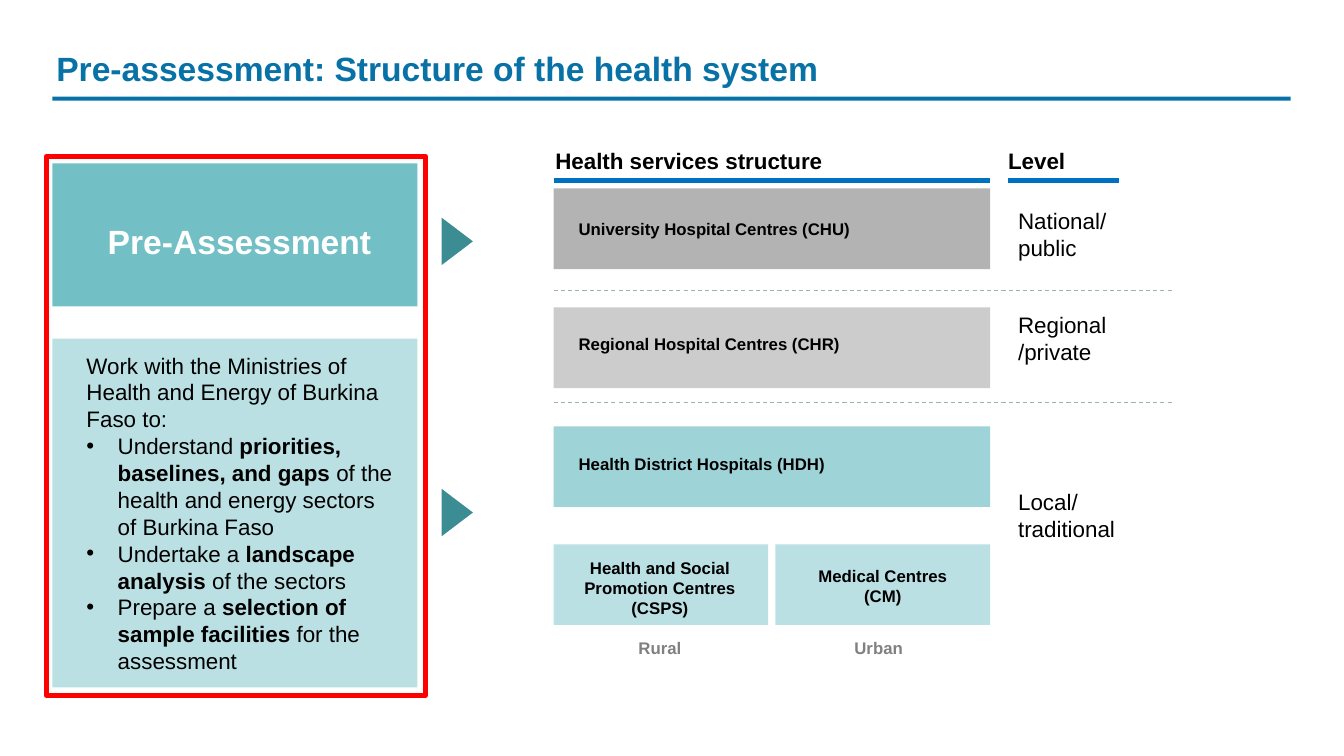
from lxml import etree
from pptx import Presentation
from pptx.dml.color import RGBColor
from pptx.enum.dml import MSO_LINE
from pptx.enum.shapes import MSO_CONNECTOR, MSO_SHAPE
from pptx.enum.text import PP_ALIGN
from pptx.oxml.ns import qn
from pptx.util import Emu, Pt

PX = 9144  # 100 px to the inch
LEFT, CENTER = PP_ALIGN.LEFT, PP_ALIGN.CENTER
RECT, TRIANGLE = MSO_SHAPE.RECTANGLE, MSO_SHAPE.ISOSCELES_TRIANGLE
STRAIGHT, DASH = MSO_CONNECTOR.STRAIGHT, MSO_LINE.DASH
FONT = "Arial"
BULLET_INDENT = 31

COLORS = {
    "title": "0872A6", "header": "72BFC5", "panel": "BBE0E3", "frame": "FF0000",
    "arrow": "3C8C93", "national": "B3B3B3", "regional": "CCCCCC",
    "district": "9ED3D7", "rule": "0070C0", "divider": "94B5B7",
    "black": "000000", "white": "FFFFFF", "gray": "808080",
}

TITLE = "Pre-assessment: Structure of the health system"
PANEL_TITLE = "Pre-Assessment"
# "**" switches bold on and off
PANEL_INTRO = "Work with the Ministries of Health and Energy of Burkina Faso to:"
PANEL_TASKS = [
    "Understand **priorities, baselines, and gaps** of the health and energy sectors of Burkina Faso",
    "Undertake a **landscape analysis** of the sectors",
    "Prepare a **selection of sample facilities** for the assessment",
]
# heading, text left, text width, rule left, rule right
HEADINGS = [
    ("Health services structure", 541, 433, 549, 982),
    ("Level", 990, 113, 1000, 1110),
]
# label, label top, fill
HOSPITALS = [
    ("University Hospital Centres (CHU)", 212, "national"),
    ("Regional Hospital Centres (CHR)", 326, "regional"),
    ("Health District Hospitals (HDH)", 445, "district"),
]
# label, label left, label top, label height, setting, setting left
LOCAL_CENTRES = [
    ("Health and Social Promotion Centres (CSPS)", 564, 548, 71, "Rural", 564),
    ("Medical Centres (CM)", 785, 556, 50, "Urban", 781),
]
# paragraphs, top, width
LEVELS = [
    (["National/public"], 201, 113),
    (["Regional/private"], 304, 113),
    (["Local/", "traditional"], 479, 126),
]
DIVIDER_TOPS = [288, 399]
ARROW_TOPS = [493, 224]

PANEL_LEFT, PANEL_WIDTH = 52, 362
CHART_LEFT, CHART_WIDTH = 549, 433
ROW_TOP, ROW_PITCH, ROW_HEIGHT = 187, 118, 80
CENTRE_WIDTH = 213

prs = Presentation()
prs.slide_width, prs.slide_height = Emu(1333 * PX), Emu(750 * PX)
slide = prs.slides.add_slide(prs.slide_layouts[6])


def color(name):
    return RGBColor.from_string(COLORS[name])


def add_block(left, top, width, height, fill, kind=RECT):
    block = slide.shapes.add_shape(kind, left * PX, top * PX, width * PX, height * PX)
    block.shadow.inherit = False
    block.line.fill.background()
    if fill:
        block.fill.solid()
        block.fill.fore_color.rgb = color(fill)
    else:
        block.fill.background()
    return block


def add_rule(left, right, top, stroke, weight, dash=None):
    rule = slide.shapes.add_connector(STRAIGHT, left * PX, top * PX, right * PX, top * PX)
    rule.line.color.rgb = color(stroke)
    rule.line.width = Pt(weight)
    if dash:
        rule.line.dash_style = dash
    etree.SubElement(rule._element.spPr, qn("a:effectLst"))


def add_bullet(paragraph):
    properties = paragraph._p.get_or_add_pPr()
    properties.set("marL", str(BULLET_INDENT * PX))
    properties.set("indent", str(-BULLET_INDENT * PX))
    etree.SubElement(properties, qn("a:buFont")).set("typeface", FONT)
    etree.SubElement(properties, qn("a:buChar")).set("char", "•")


def add_text(left, top, width, height, paragraphs, size, ink="black",
             bold=False, align=LEFT, bulleted_from=None):
    """Write paragraphs; those from index bulleted_from onwards get bullets."""
    box = slide.shapes.add_textbox(left * PX, top * PX, width * PX, height * PX)
    frame = box.text_frame
    frame.word_wrap = True
    for index, content in enumerate(paragraphs):
        paragraph = frame.add_paragraph() if index else frame.paragraphs[0]
        paragraph.alignment = align
        if bulleted_from is not None and index >= bulleted_from:
            add_bullet(paragraph)
        for part, words in enumerate(content.split("**")):
            run = paragraph.add_run()
            run.text = words
            run.font.name = FONT
            run.font.size = Pt(size)
            run.font.bold = bold or part % 2 == 1
            run.font.color.rgb = color(ink)


add_block(52, 96, 1228, 4, "title")
add_text(46, 43, 1241, 50, [TITLE], 24, "title", bold=True)

add_block(PANEL_LEFT, 162, PANEL_WIDTH, 142, "header")
add_block(PANEL_LEFT, 336, PANEL_WIDTH, 346, "panel")
add_text(76, 214, 323, 50, [PANEL_TITLE], 24, "white", bold=True, align=CENTER)
add_text(76, 344, 323, 333, [PANEL_INTRO, *PANEL_TASKS], 16, bulleted_from=1)
frame = add_block(46, 155, 376, 535, None)
frame.line.color.rgb = color("frame")
frame.line.width = Pt(3.5)

for top in ARROW_TOPS:
    add_block(430, top, 47, 31, "arrow", TRIANGLE).rotation = 90

for heading, left, width, rule_left, rule_right in HEADINGS:
    add_rule(rule_left, rule_right, 179, "rule", 3.25)
    add_text(left, 141, width, 37, [heading], 16, bold=True)

for row, (label, label_top, fill) in enumerate(HOSPITALS):
    add_block(CHART_LEFT, ROW_TOP + row * ROW_PITCH, CHART_WIDTH, ROW_HEIGHT, fill)
    add_text(564, label_top, 409, 30, [label], 12, bold=True)

centres_top = ROW_TOP + len(HOSPITALS) * ROW_PITCH - 1
for column, (label, left, top, height, setting, setting_left) in enumerate(LOCAL_CENTRES):
    centre_left = CHART_LEFT + column * (CHART_WIDTH - CENTRE_WIDTH)
    add_block(centre_left, centres_top, CENTRE_WIDTH, ROW_HEIGHT, "panel")
    add_text(left, top, 181, height, [label], 12, bold=True, align=CENTER)
    add_text(setting_left, 628, 181, 30, [setting], 12, "gray", bold=True, align=CENTER)

for level, top, width in LEVELS:
    add_text(1000, top, width, 64, level, 16)

for top in DIVIDER_TOPS:
    add_rule(CHART_LEFT, 1163, top, "divider", 0.75, DASH)

prs.save("out.pptx")
